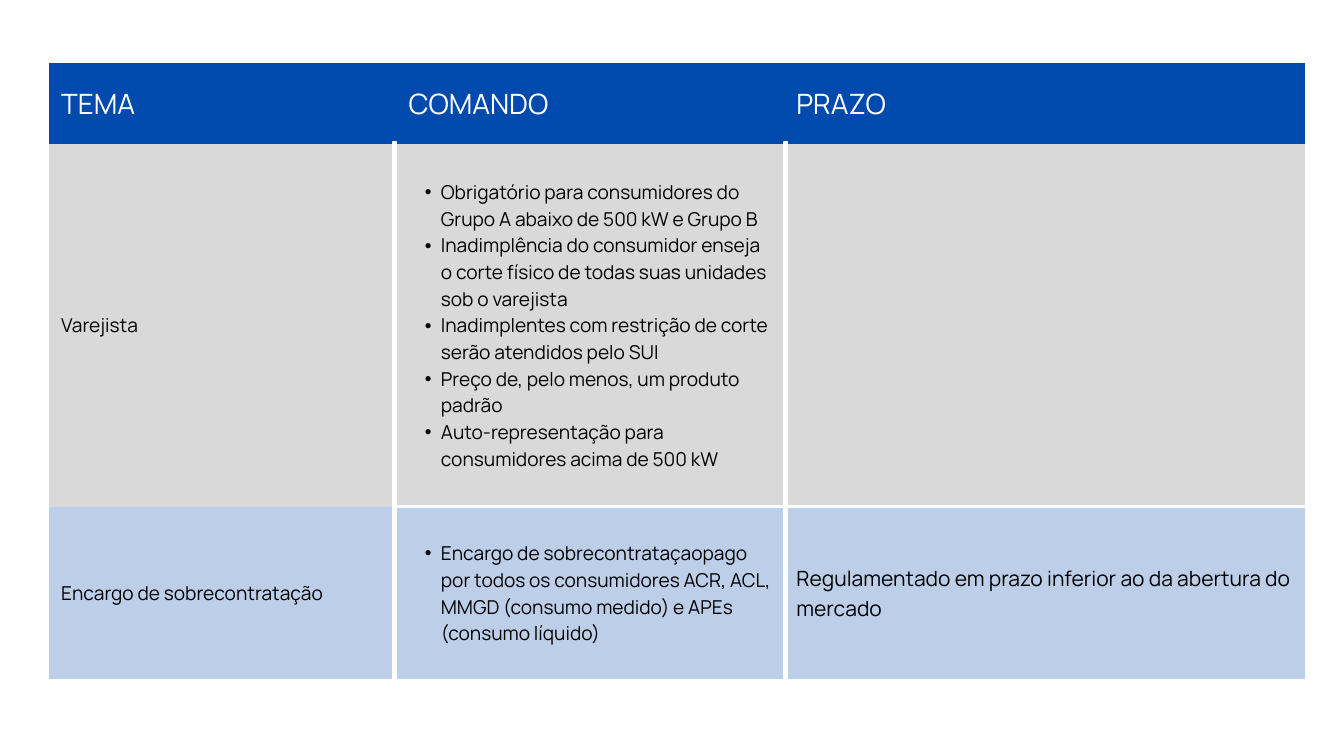
from lxml.etree import SubElement
from pptx import Presentation
from pptx.dml.color import RGBColor
from pptx.enum.shapes import MSO_CONNECTOR, MSO_SHAPE
from pptx.enum.text import MSO_ANCHOR
from pptx.oxml.ns import qn
from pptx.util import Pt

FONT = "Manrope"
BLUE = RGBColor(0x00, 0x4A, 0xAD)
GRAY = RGBColor(0xD9, 0xD9, 0xD9)
LIGHT_BLUE = RGBColor(0xBC, 0xCE, 0xE8)
WHITE = RGBColor(0xFF, 0xFF, 0xFF)
BLACK = RGBColor(0x00, 0x00, 0x00)

SLIDE_WIDTH, SLIDE_HEIGHT = 1440, 810
TABLE_LEFT, TABLE_TOP = 52.6, 67
COLUMN_WIDTHS = [372.2, 415.4, 558]
ROW_HEIGHTS = [87.1, 388.8, 185]
ROW_FILLS = [BLUE, GRAY, LIGHT_BLUE]
CELL_MARGIN = 13
DIVIDER_LEFTS = [421.2, 840.2]
DIVIDER_TOP, DIVIDER_WIDTH = 152.6, 3.6
RULE_TOP = 542.9

HEADER = dict(size=30, spacing=42, color=WHITE)
BODY = dict(size=20.5, spacing=28.6)
BULLETS = dict(BODY, bullet=True)
DEADLINE = dict(size=22.5, spacing=31.4)

# Each cell: its paragraphs and their format
ROWS = [
    [(["TEMA"], HEADER), (["COMANDO"], HEADER), (["PRAZO"], HEADER)],
    [
        (["Varejista"], BODY),
        ([
            "Obrigatório para consumidores do Grupo A abaixo de 500 kW e Grupo B",
            "Inadimplência do consumidor enseja o corte físico de todas suas unidades sob o varejista",
            "Inadimplentes com restrição de corte serão atendidos pelo SUI",
            "Preço de, pelo menos, um produto padrão",
            "Auto-representação para consumidores acima de 500 kW",
        ], BULLETS),
        ([], BODY),
    ],
    [
        (["Encargo de sobrecontratação"], BODY),
        (["Encargo de sobrecontrataçaopago por todos os consumidores ACR, ACL, "
          "MMGD (consumo medido) e APEs (consumo líquido)"], BULLETS),
        (["Regulamentado em prazo inferior ao da abertura do mercado"], DEADLINE),
    ],
]


def write_paragraph(para, text, size, spacing, color=BLACK, bullet=False):
    para.line_spacing = Pt(spacing)
    if bullet:
        para.level = 1
        properties = para._p.get_or_add_pPr()
        properties.set("marL", str(Pt(34.6)))
        properties.set("indent", str(Pt(-17.3)))
        SubElement(properties, qn("a:buFont"), typeface="Arial")
        SubElement(properties, qn("a:buChar"), char="•")
    span = para.add_run()
    span.text = text
    span.font.name = FONT
    span.font.size = Pt(size)
    span.font.bold = False
    span.font.color.rgb = color


def hide_borders(cell):
    properties = cell._tc.get_or_add_tcPr()
    for position, side in enumerate(("lnL", "lnR", "lnT", "lnB")):
        border = SubElement(properties, qn(f"a:{side}"), w="0")
        SubElement(border, qn("a:noFill"))
        properties.insert(position, border)


def fill_cell(cell, texts, style, fill):
    cell.fill.solid()
    cell.fill.fore_color.rgb = fill
    hide_borders(cell)
    cell.vertical_anchor = MSO_ANCHOR.MIDDLE
    cell.margin_left = cell.margin_right = Pt(CELL_MARGIN)
    cell.margin_top = cell.margin_bottom = Pt(CELL_MARGIN)
    frame = cell.text_frame
    for index, text in enumerate(texts):
        para = frame.add_paragraph() if index else frame.paragraphs[0]
        write_paragraph(para, text, **style)


def add_topic_table(page):
    table = page.shapes.add_table(
        len(ROWS), len(COLUMN_WIDTHS), Pt(TABLE_LEFT), Pt(TABLE_TOP),
        Pt(sum(COLUMN_WIDTHS)), Pt(sum(ROW_HEIGHTS))).table
    for column, width in zip(table.columns, COLUMN_WIDTHS):
        column.width = Pt(width)
    for row, height, contents, fill in zip(table.rows, ROW_HEIGHTS, ROWS, ROW_FILLS):
        row.height = Pt(height)
        for cell, (texts, style) in zip(row.cells, contents):
            fill_cell(cell, texts, style, fill)


def add_divider(page, left):
    bar = page.shapes.add_shape(
        MSO_SHAPE.RECTANGLE, Pt(left), Pt(DIVIDER_TOP),
        Pt(DIVIDER_WIDTH), Pt(SLIDE_HEIGHT - DIVIDER_TOP))
    bar.shadow.inherit = False
    bar.fill.solid()
    bar.fill.fore_color.rgb = WHITE
    bar.line.color.rgb = WHITE
    bar.line.width = Pt(2)


def add_rule(page, left, right, top):
    rule = page.shapes.add_connector(
        MSO_CONNECTOR.STRAIGHT, Pt(left), Pt(top), Pt(right), Pt(top))
    rule.line.color.rgb = WHITE
    rule.line.width = Pt(3.75)
    SubElement(rule._element.spPr, qn("a:effectLst"))


def main():
    deck = Presentation()
    deck.slide_width, deck.slide_height = Pt(SLIDE_WIDTH), Pt(SLIDE_HEIGHT)
    page = deck.slides.add_slide(deck.slide_layouts[6])

    # Table of topics, commands and deadlines
    add_topic_table(page)

    # White separators over the table
    for left in DIVIDER_LEFTS:
        add_divider(page, left)
    add_rule(page, DIVIDER_LEFTS[0], SLIDE_WIDTH, RULE_TOP)

    deck.save("out.pptx")


if __name__ == "__main__":
    main()
